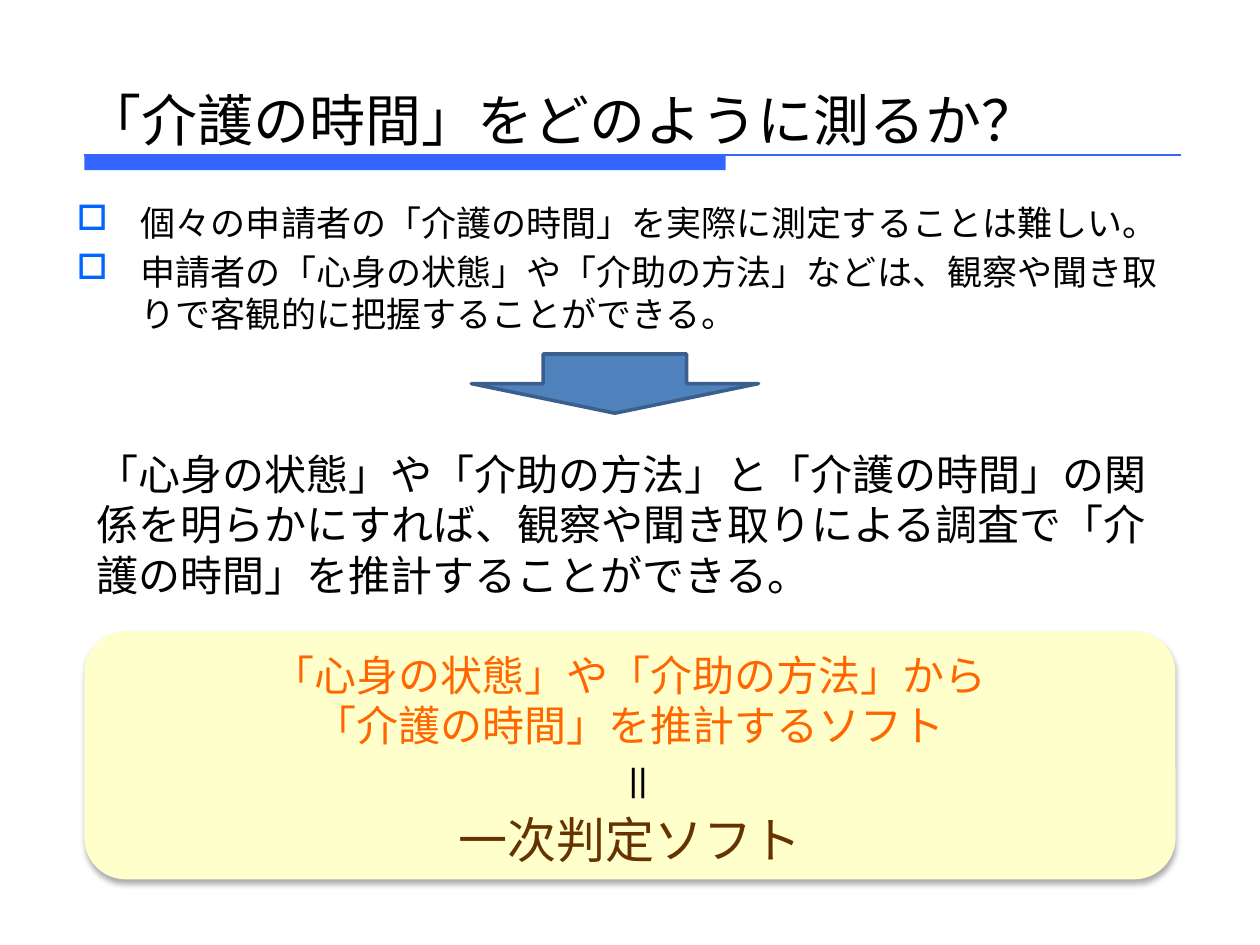
import pptx
import pptx.util
import pptx.dml.color
import pptx.enum.shapes
import pptx.enum.text
import pptx.oxml
import pptx.oxml.ns
import lxml.etree

COLORS = {
    "rule": "3366FF", "text": "000000", "bullet": "0066FF",
    "arrow": "4F81BD", "arrow_edge": "3A5F8C",
    "panel": "FFFFCC", "accent": "FF6600", "result": "663300",
}
BODY_FONT = "DejaVu Sans"
SHAPES = pptx.enum.shapes.MSO_SHAPE
ANCHOR = pptx.enum.text.MSO_ANCHOR
CENTER = pptx.enum.text.PP_ALIGN.CENTER

deck = pptx.Presentation()
deck.slide_width = pptx.util.Inches(10)
deck.slide_height = pptx.util.Inches(7.5)
# The page is a grid of 100 columns by 75 rows
COLUMN = deck.slide_width / 100
ROW = deck.slide_height / 75


def grid(box):
    left, top, width, height = box
    return [int(n) for n in (left * COLUMN, top * ROW, width * COLUMN, height * ROW)]


def color(name):
    return pptx.dml.color.RGBColor.from_string(COLORS[name])


def add_xml(parent, tag, **attributes):
    child = lxml.etree.SubElement(parent, pptx.oxml.ns.qn(tag))
    for key, value in attributes.items():
        child.set(key, value)
    return child


def write(para, text, size, ink="text", font=BODY_FONT):
    para.text = text
    for span in para.runs:
        span.font.size = pptx.util.Pt(size)
        span.font.name = font
        span.font.color.rgb = color(ink)


def add_text_frame(page, box):
    frame = page.shapes.add_textbox(*grid(box)).text_frame
    frame.word_wrap = True
    return frame


def add_filled(page, kind, box, fill):
    shape = page.shapes.add_shape(kind, *grid(box))
    shape.shadow.inherit = False
    shape.fill.solid()
    shape.fill.fore_color.rgb = color(fill)
    shape.line.fill.background()
    return shape


def add_heading(page, box, text):
    frame = add_text_frame(page, box)
    frame.vertical_anchor = ANCHOR.BOTTOM
    write(frame.paragraphs[0], text, 32, font="Calibri")


def add_rule(page, box):
    """Thick bar over part of the width, thin line over all of it."""
    left, top, width, height = box
    add_filled(page, SHAPES.RECTANGLE, (left, top, width * 0.585, height), "rule")
    x, y, length, _ = grid(box)
    line = page.shapes.add_connector(
        pptx.enum.shapes.MSO_CONNECTOR.STRAIGHT, x, y, x + length, y)
    line.line.color.rgb = color("rule")
    line.line.width = pptx.util.Pt(0.75)
    add_xml(line._element.spPr, "a:effectLst")


def add_bullets(page, box, items):
    frame = add_text_frame(page, box)
    indent = int(5.1 * COLUMN)
    for index, item in enumerate(items):
        para = frame.add_paragraph() if index else frame.paragraphs[0]
        write(para, item, 20)
        para.space_before = pptx.util.Pt(4)
        properties = para._p.get_or_add_pPr()
        properties.set("marL", str(indent))
        properties.set("indent", str(-indent))
        add_xml(add_xml(properties, "a:buClr"), "a:srgbClr", val=COLORS["bullet"])
        add_xml(properties, "a:buChar", char="□")


def add_arrow(page, box):
    arrow = add_filled(page, SHAPES.DOWN_ARROW, box, "arrow")
    arrow.line.color.rgb = color("arrow_edge")
    arrow.line.width = pptx.util.Pt(2)


def add_statement(page, box, text):
    para = add_text_frame(page, box).paragraphs[0]
    write(para, text, 24)
    para.space_before = pptx.util.Pt(4.8)


def add_conclusion(page, box, premise, result):
    left, top, width, height = box
    panel = add_filled(page, SHAPES.ROUNDED_RECTANGLE, box, "panel")
    effects = panel._element.spPr.find(pptx.oxml.ns.qn("a:effectLst"))
    shadow = add_xml(effects, "a:outerShdw", blurRad=str(pptx.util.Pt(3.5)),
                     dist=str(pptx.util.Pt(2.2)), dir="5400000", rotWithShape="0")
    add_xml(add_xml(shadow, "a:srgbClr", val="000000"), "a:alpha", val="32000")

    # Premise above, result below, with room for the equals sign
    frame = panel.text_frame
    frame.word_wrap = True
    frame.vertical_anchor = ANCHOR.TOP
    first, last = frame.paragraphs[0], frame.add_paragraph()
    write(first, premise, 24, "accent")
    write(last, result, 28, "result")
    last.space_before = pptx.util.Pt(34)
    for para in (first, last):
        para.alignment = CENTER

    # Upright equals sign
    sign_box = (left + width * 0.467, top + height * 0.48, 6.1, 5.5)
    sign = add_text_frame(page, sign_box)
    sign._txBody.bodyPr.set("vert", "eaVert")
    write(sign.paragraphs[0], "＝", 24)


page = deck.slides.add_slide(deck.slide_layouts[6])
add_rule(page, (6.7, 12.3, 87, 1.2))
add_heading(page, (5.8, 0.1, 90, 12.5), "「介護の時間」をどのように測るか？")
add_bullets(page, (5.1, 15.5, 90, 11.8), [
    "個々の申請者の「介護の時間」を実際に測定することは難しい。",
    "申請者の「心身の状態」や「介助の方法」などは、観察や聞き取りで客観的に把握することができる。",
])
add_statement(page, (6.7, 35.1, 86.6, 14.2),
              "「心身の状態」や「介助の方法」と「介護の時間」の関係を明らかにすれば、"
              "観察や聞き取りによる調査で「介護の時間」を推計することができる。")
add_arrow(page, (37.4, 28.1, 22.8, 4.7))
add_conclusion(page, (6.7, 50.1, 86.6, 19.7),
               "「心身の状態」や「介助の方法」から\n「介護の時間」を推計するソフト",
               "一次判定ソフト")
deck.save("out.pptx")
